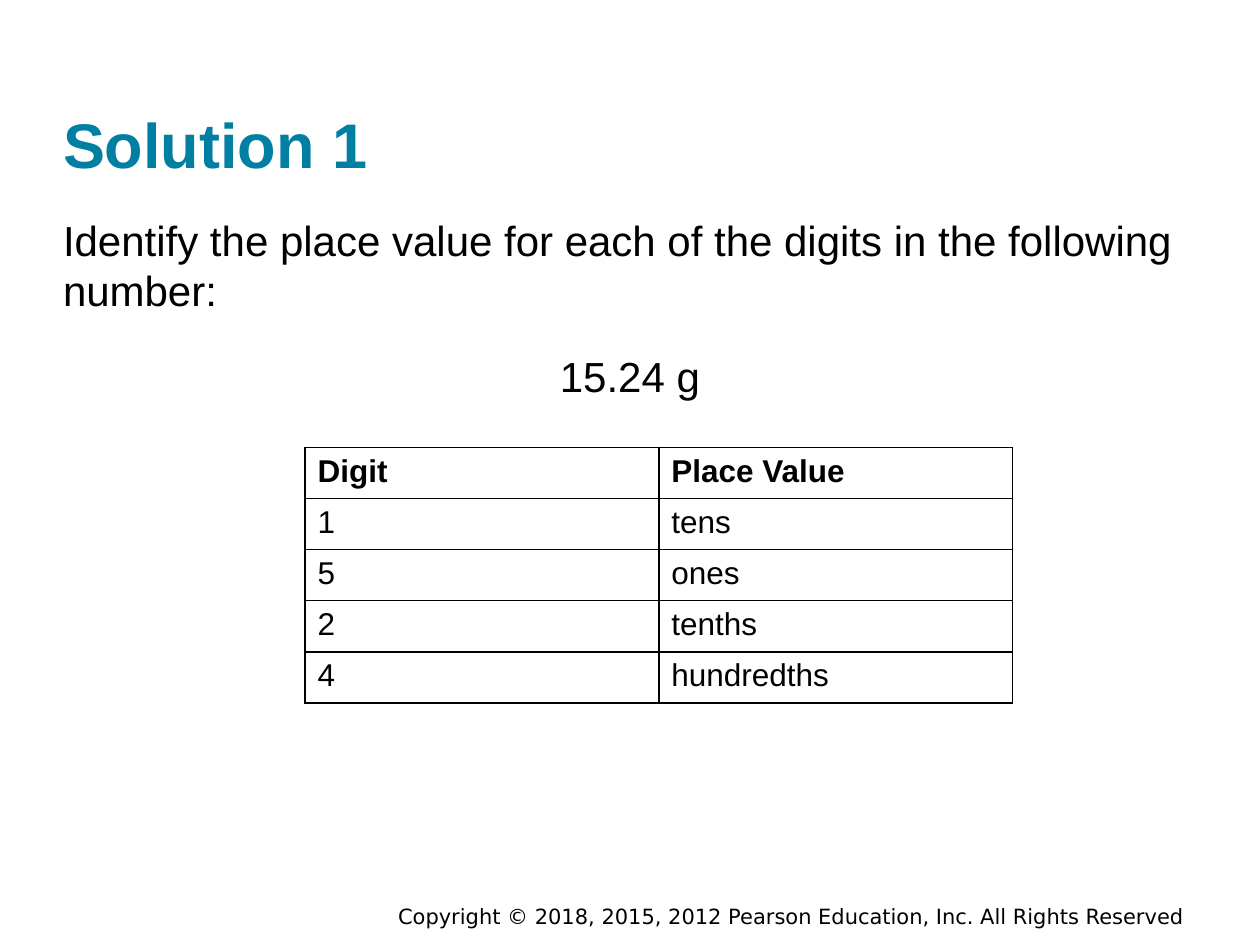
from lxml import etree
from pptx import Presentation
from pptx.dml.color import RGBColor
from pptx.enum.text import MSO_ANCHOR, MSO_AUTO_SIZE, PP_ALIGN
from pptx.oxml.ns import qn
from pptx.util import Cm, Pt

LEFT, CENTER, RIGHT = PP_ALIGN.LEFT, PP_ALIGN.CENTER, PP_ALIGN.RIGHT
TOP, MIDDLE, BOTTOM = MSO_ANCHOR.TOP, MSO_ANCHOR.MIDDLE, MSO_ANCHOR.BOTTOM
COLORS = {"title": "007FA3", "text": "000000", "border": "000000"}


def add_run(p, text, size, color="text", bold=False, font="Arial"):
    r = p.add_run()
    r.text = text
    r.font.name = font
    r.font.size = Pt(size)
    r.font.bold = bold
    r.font.color.rgb = RGBColor.from_string(COLORS[color])


def place(sp, left, top, width, height, anchor, align, inset=0):
    """Position a text shape and return its first paragraph, without bullet."""
    sp.left, sp.top, sp.width, sp.height = Cm(left), Cm(top), Cm(width), Cm(height)
    tf = sp.text_frame
    tf.word_wrap = True
    tf.auto_size = MSO_AUTO_SIZE.NONE
    tf.vertical_anchor = anchor
    tf.margin_left = tf.margin_right = Cm(inset)
    tf.margin_top = tf.margin_bottom = Cm(inset / 2)
    p = tf.paragraphs[0]
    pPr = p._p.get_or_add_pPr()
    pPr.set("marL", "0")
    pPr.set("indent", "0")
    etree.SubElement(pPr, qn("a:buNone"))
    p.alignment = align
    p.space_before = Pt(0)
    return p


prs = Presentation()
prs.slide_width, prs.slide_height = Cm(25.4), Cm(19.05)
s = prs.slides.add_slide(prs.slide_layouts[3])
title, question, number = s.placeholders

# Title, question and number
p = place(title, 1.27, 0.61, 22.86, 3.05, BOTTOM, LEFT)
add_run(p, "Solution 1", 36, "title", bold=True)

p = place(question, 1.27, 4.32, 22.86, 2.18, TOP, LEFT)
add_run(p, "Identify the place value for each of the digits in the following number:", 24)

p = place(number, 1.27, 7.06, 22.86, 1.14, TOP, CENTER)
add_run(p, "15.24 g", 24)

# Place value table
rows = [
    ("Digit", "Place Value"),
    ("1", "tens"),
    ("5", "ones"),
    ("2", "tenths"),
    ("4", "hundredths"),
]
row_height, col_width = 1.03, 7.13
table = s.shapes.add_table(
    len(rows), 2, Cm(6.15), Cm(9.02), Cm(2 * col_width), Cm(len(rows) * row_height)
).table
for column in table.columns:
    column.width = Cm(col_width)
for i, row in enumerate(rows):
    table.rows[i].height = Cm(row_height)
    for j, text in enumerate(row):
        cell = table.cell(i, j)
        add_run(cell.text_frame.paragraphs[0], text, 18, bold=i == 0)
        tcPr = cell._tc.get_or_add_tcPr()
        for side in ("a:lnL", "a:lnR", "a:lnT", "a:lnB"):
            ln = etree.SubElement(tcPr, qn(side), w=str(Pt(1)))
            fill = etree.SubElement(ln, qn("a:solidFill"))
            etree.SubElement(fill, qn("a:srgbClr"), val=COLORS["border"])
        cell.fill.background()

# Copyright line
box = s.shapes.add_textbox(0, 0, 0, 0)
p = place(box, 7.37, 17.88, 16.76, 1.17, MIDDLE, RIGHT, inset=0.25)
add_run(
    p,
    "Copyright © 2018, 2015, 2012 Pearson Education, Inc. All Rights Reserved",
    12,
    font="DejaVu Sans",
)

prs.save("out.pptx")
